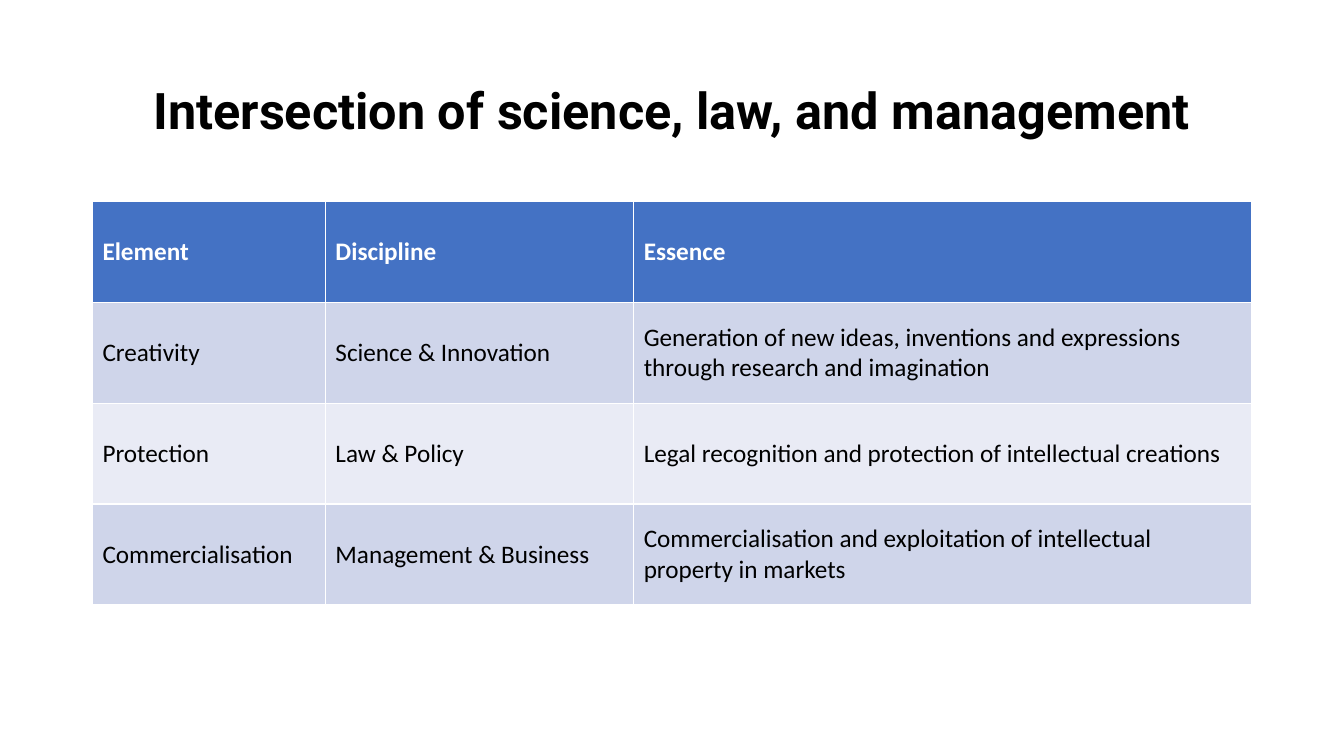
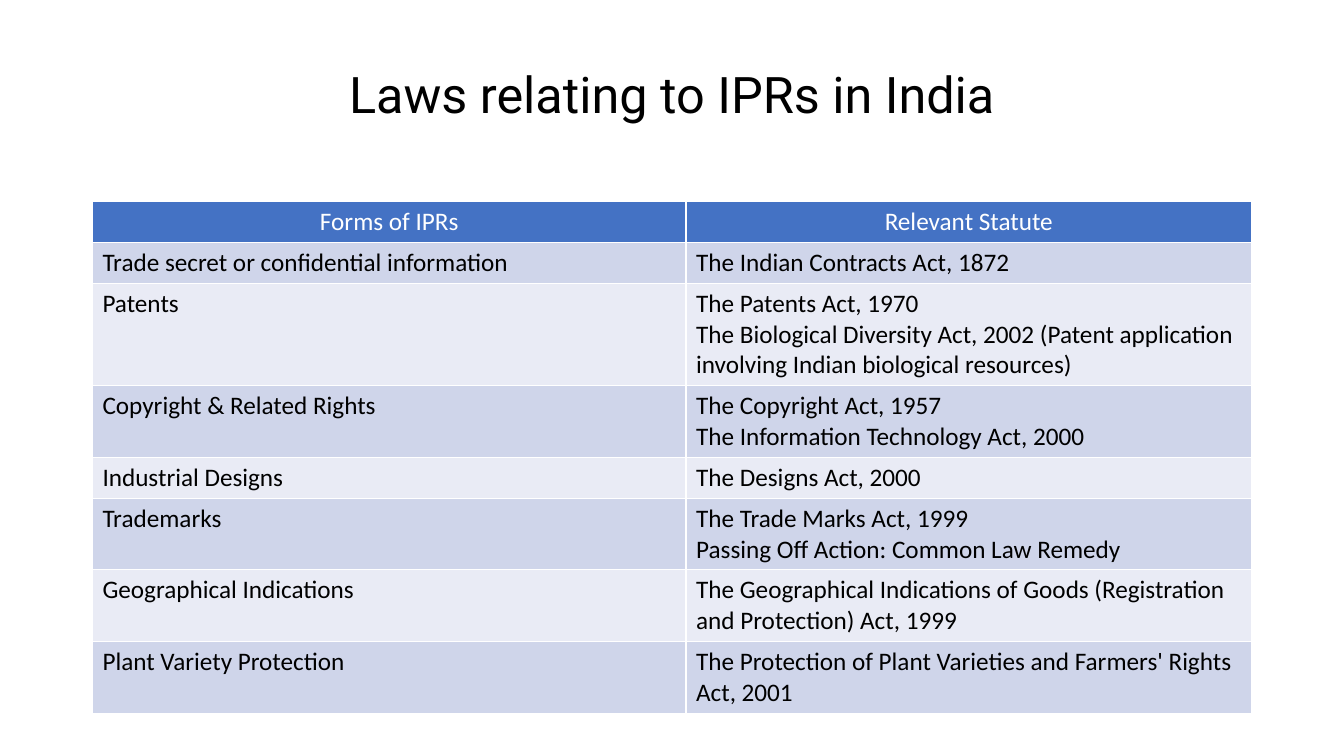
from lxml.etree import SubElement
from pptx import Presentation
from pptx.dml.color import RGBColor
from pptx.enum.text import MSO_ANCHOR as Anchor, PP_ALIGN as Align
from pptx.oxml.ns import qn
from pptx.util import Cm, Pt

BLACK = RGBColor(0x00, 0x00, 0x00)
WHITE = RGBColor(0xFF, 0xFF, 0xFF)
HEADER_BLUE = RGBColor(0x44, 0x72, 0xC4)
BANDS = (RGBColor(0xCF, 0xD5, 0xEA), RGBColor(0xE9, 0xEB, 0xF5))

DISCIPLINES = [
    ("Element", "Discipline", "Essence"),
    ("Creativity", "Science & Innovation",
     "Generation of new ideas, inventions and expressions through research and imagination"),
    ("Protection", "Law & Policy",
     "Legal recognition and protection of intellectual creations"),
    ("Commercialisation", "Management & Business",
     "Commercialisation and exploitation of intellectual property in markets"),
]
STATUTES = [
    ("Forms of IPRs", "Relevant Statute"),
    ("Trade secret or confidential information", "The Indian Contracts Act, 1872"),
    ("Patents", "The Patents Act, 1970\nThe Biological Diversity Act, 2002 "
     "(Patent application involving Indian biological resources)"),
    ("Copyright & Related Rights",
     "The Copyright Act, 1957\nThe Information Technology Act, 2000"),
    ("Industrial Designs", "The Designs Act, 2000"),
    ("Trademarks", "The Trade Marks Act, 1999\nPassing Off Action: Common Law Remedy"),
    ("Geographical Indications",
     "The Geographical Indications of Goods (Registration and Protection) Act, 1999"),
    ("Plant Variety Protection",
     "The Protection of Plant Varieties and Farmers' Rights Act, 2001"),
]


class Deck:
    """Holds the shared style and the slide being built."""

    left, width = Cm(2.33), Cm(29.21)
    title_top, table_top = Cm(1.01), Cm(5.08)
    title_font, table_font = "Roboto", "Calibri"

    def __init__(self):
        self.prs = Presentation()
        self.prs.slide_width, self.prs.slide_height = Cm(33.87), Cm(19.05)
        self.slide = None

    def add_slide(self, heading, height, bold=False):
        self.slide = self.prs.slides.add_slide(self.prs.slide_layouts[5])
        title = self.slide.shapes.title
        title.left, title.top = self.left, self.title_top
        title.width, title.height = self.width, height
        title.text_frame.text = heading
        title.text_frame.vertical_anchor = Anchor.MIDDLE
        paragraph = title.text_frame.paragraphs[0]
        paragraph.line_spacing = 0.9
        self.style(paragraph, self.title_font, 36, BLACK, bold, Align.CENTER)

    def add_table(self, rows, widths, row_height, anchor=Anchor.TOP,
                  header_bold=False, header_align=Align.LEFT):
        table = self.slide.shapes.add_table(
            len(rows), len(widths), self.left, self.table_top,
            self.width, row_height * len(rows)).table
        for column, width in zip(table.columns, widths):
            column.width = width
        for r, texts in enumerate(rows):
            table.rows[r].height = row_height
            is_header = r == 0
            fill = HEADER_BLUE if is_header else BANDS[(r - 1) % 2]
            color = WHITE if is_header else BLACK
            align = header_align if is_header else Align.LEFT
            for c, text in enumerate(texts):
                cell = table.cell(r, c)
                cell.text = text
                cell.vertical_anchor = anchor
                self.add_borders(cell)
                cell.fill.solid()
                cell.fill.fore_color.rgb = fill
                for paragraph in cell.text_frame.paragraphs:
                    self.style(paragraph, self.table_font, 18, color,
                               is_header and header_bold, align)

    @staticmethod
    def add_borders(cell):
        properties = cell._tc.get_or_add_tcPr()
        for side in ("a:lnL", "a:lnR", "a:lnT", "a:lnB"):
            line = SubElement(properties, qn(side), w=str(Pt(1)))
            fill = SubElement(line, qn("a:solidFill"))
            SubElement(fill, qn("a:srgbClr"), val=str(WHITE))

    @staticmethod
    def style(paragraph, name, size, color, bold, align):
        paragraph.alignment = align
        font = paragraph.font
        font.name, font.size, font.bold = name, Pt(size), bold
        font.color.rgb = color


def main():
    deck = Deck()
    deck.add_slide("Intersection of science, law, and management", Cm(3.68), bold=True)
    deck.add_table(DISCIPLINES, (Cm(5.87), Cm(7.77), Cm(15.57)), Cm(2.54),
                   anchor=Anchor.MIDDLE, header_bold=True)
    deck.add_slide("Laws relating to IPRs in India", Cm(2.87))
    deck.add_table(STATUTES, (Cm(14.96), Cm(14.25)), Cm(1.03),
                   header_align=Align.CENTER)
    deck.prs.save("out.pptx")


if __name__ == "__main__":
    main()
